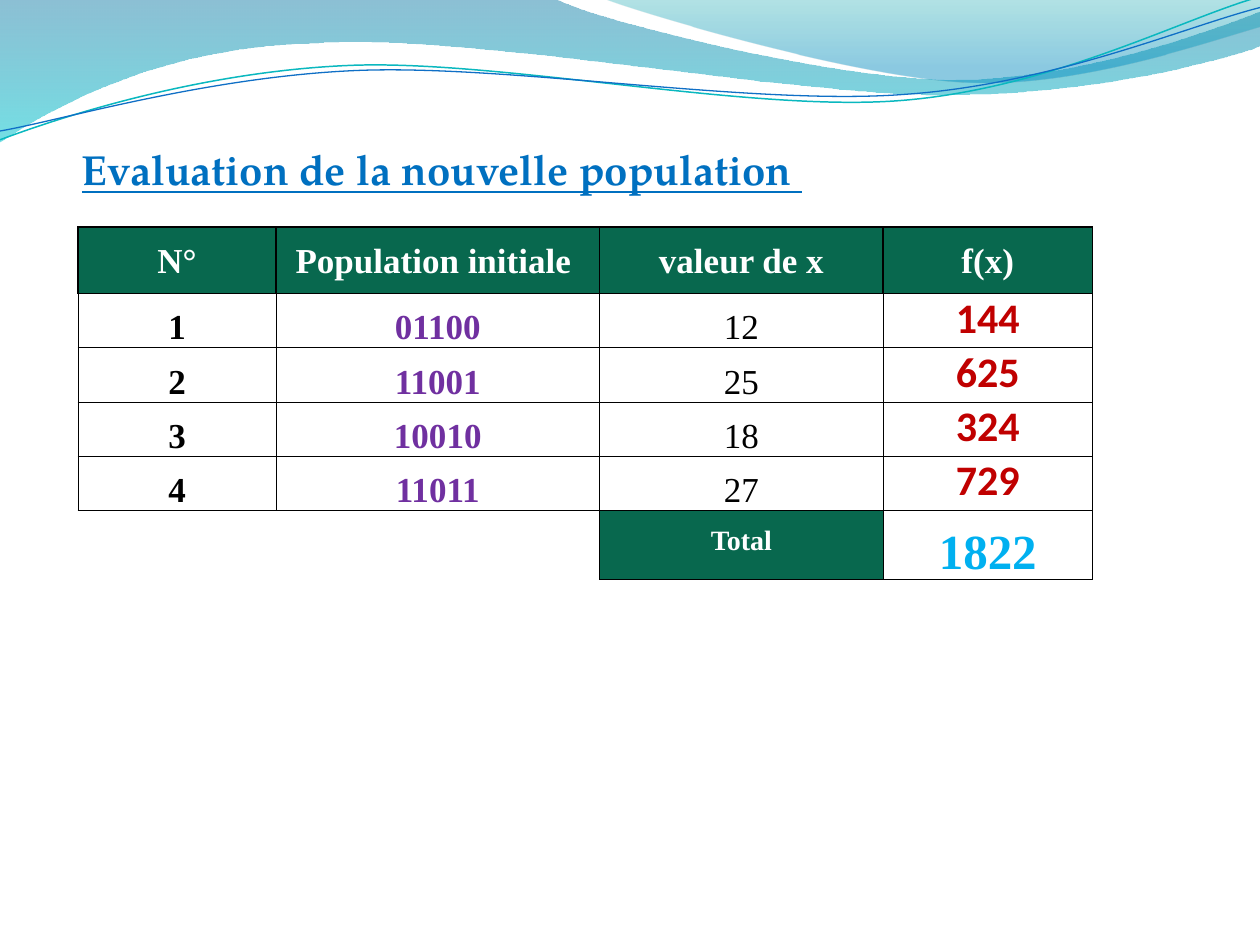
"""Build the slide that evaluates the new population, with its wave header."""
from lxml import etree
from pptx import Presentation
from pptx.dml.color import RGBColor
from pptx.enum.text import MSO_ANCHOR, MSO_AUTO_SIZE, PP_ALIGN
from pptx.oxml.ns import qn
from pptx.util import Inches, Pt

CENTER, JUSTIFY = PP_ALIGN.CENTER, PP_ALIGN.JUSTIFY
TOP, NO_FIT = MSO_ANCHOR.TOP, MSO_AUTO_SIZE.NONE
BLUE = RGBColor(0x00, 0x70, 0xC0)
GREEN = RGBColor(0x08, 0x68, 0x4E)
WHITE = RGBColor(0xFF, 0xFF, 0xFF)
BLACK = RGBColor(0x00, 0x00, 0x00)
PURPLE = RGBColor(0x70, 0x30, 0xA0)
RED = RGBColor(0xC0, 0x00, 0x00)
SKY = RGBColor(0x00, 0xB0, 0xF0)
DEEP_TEAL = RGBColor(0x00, 0x74, 0xA1)
CYAN = RGBColor(0x00, 0xC6, 0xCF)
SEA = RGBColor(0x00, 0xA1, 0xA9)
AZURE = RGBColor(0x00, 0x8B, 0xBF)
TEAL_LINE = RGBColor(0x0A, 0xB8, 0xBF)
BLUE_LINE = RGBColor(0x0F, 0x6F, 0xC6)
SERIF, SANS, TITLE_FONT = "Times New Roman", "Calibri", "TeX Gyre Pagella"
PLAIN_TABLE_STYLE = "{2D5ABB26-0587-4C30-8999-92F81FD0307C}"

TITLE = "Evaluation de la nouvelle population "
HEADERS = ["N°", "Population initiale ", "valeur de x", "f(x)"]
ROWS = [
    ["1", "01100", "12", "144"],
    ["2", "11001", "25", "625"],
    ["3", "10010", "18", "324"],
    ["4", "11011", "27", "729"],
]
TOTAL = ["", "", "Total", "1822"]
COLUMN_WIDTHS = [1.57, 2.57, 2.25, 1.66]
ROW_HEIGHTS = [0.53] + [0.43] * len(ROWS) + [0.49]

HEADER_STYLE = (SERIF, 20, True, WHITE)
COLUMN_STYLES = [
    (SERIF, 20, True, BLACK),
    (SERIF, 20, True, PURPLE),
    (SERIF, 20, False, BLACK),
    (SANS, 24, True, RED),
]
TOTAL_STYLES = [None, None, (SERIF, 16, True, WHITE), (SERIF, 28, True, SKY)]

# Each path is a list of points (two numbers) and Bezier segments (six numbers).
BANDS = [
    ([(0, 0), (4.4, -0.01), (4.76, 0.17, 6.64, 0.63, 7.58, 0.63),
      (8.53, 0.63, 9.58, 0.26, 10, 0.09), (10.01, 0.36),
      (9.83, 0.44, 8.7, 0.76, 7.46, 0.75), (6.22, 0.75, 3.82, 0.28, 2.57, 0.34),
      (1.29, 0.36, 0.46, 0.83, -0.01, 1.13)],
     [(0, DEEP_TEAL, 45), (1, CYAN, 55)]),
    ([(4.79, -0.01), (5.09, 0.11, 6.82, 0.62, 7.69, 0.65),
      (8.56, 0.69, 9.61, 0.32, 10, 0.21), (10, 0)],
     [(0, SEA, 30), (0.8, AZURE, 45)]),
]
WAVES = [
    ([(0, 1.11), (0.48, 0.93, 1.58, 0.57, 2.77, 0.52),
      (3.95, 0.47, 5.93, 0.89, 7.13, 0.8), (8.33, 0.71, 9.38, 0.15, 9.98, -0.02)],
     TEAL_LINE, 0.85),
    ([(0, 1.04), (0.47, 0.96, 1.64, 0.61, 2.83, 0.56),
      (4.03, 0.51, 5.97, 0.84, 7.17, 0.75), (8.36, 0.67, 9.41, 0.21, 10, 0.06)],
     BLUE_LINE, 0.75),
]


def add_path(slide, path, closed):
    segments = [[Inches(value) for value in segment] for segment in path]
    builder = slide.shapes.build_freeform(*segments[0])
    builder.add_line_segments([segment[-2:] for segment in segments[1:]], close=closed)
    shape = builder.convert_to_shape()
    shape.shadow.inherit = False
    lines = list(shape._element.spPr.iter(qn("a:lnTo")))
    for line, segment in zip(lines, segments[1:]):
        if len(segment) == 6:
            curve = etree.Element(qn("a:cubicBezTo"))
            for x, y in zip(segment[::2], segment[1::2]):
                etree.SubElement(curve, qn("a:pt"),
                                 x=str(x - shape.left), y=str(y - shape.top))
            line.getparent().replace(line, curve)
    return shape


def add_band(slide, path, stops):
    shape = add_path(slide, path, True)
    shape.line.fill.background()
    shape.fill.gradient()
    shape.fill.gradient_angle = 270
    for stop, (position, color, _) in zip(shape.fill.gradient_stops, stops):
        stop.position = position
        stop.color.rgb = color
    colors = list(shape._element.spPr.iter(qn("a:srgbClr")))
    for element, (_, _, opacity) in zip(colors, stops):
        etree.SubElement(element, qn("a:alpha"), val=str(opacity * 1000))


def add_wave(slide, path, color, width):
    shape = add_path(slide, path, False)
    shape.fill.background()
    shape.line.color.rgb = color
    shape.line.width = Pt(width)


def style_runs(paragraph, style):
    name, size, bold, color = style
    for run in paragraph.runs:
        run.font.name, run.font.size, run.font.bold = name, Pt(size), bold
        run.font.color.rgb = color


def set_borders(cell, sides, width):
    properties = cell._tc.get_or_add_tcPr()
    for index, side in enumerate(sides):
        line = etree.Element(qn("a:ln" + side), w=str(Pt(width)))
        fill = etree.SubElement(line, qn("a:solidFill"))
        etree.SubElement(fill, qn("a:srgbClr"), val=str(BLACK))
        properties.insert(index, line)


def fill_cell(cell, text, style, top_margin):
    cell.margin_left = cell.margin_right = cell.margin_bottom = 0
    cell.margin_top = Inches(top_margin)
    cell.text_frame.text = text
    paragraph = cell.text_frame.paragraphs[0]
    paragraph.alignment = CENTER
    style_runs(paragraph, style)
    if style[3] == WHITE:
        cell.fill.solid()
        cell.fill.fore_color.rgb = GREEN


def add_population_table(slide):
    contents = [HEADERS, *ROWS, TOTAL]
    styles = [[HEADER_STYLE] * len(HEADERS), *[COLUMN_STYLES] * len(ROWS), TOTAL_STYLES]
    frame = slide.shapes.add_table(
        len(contents), len(HEADERS), Inches(0.62), Inches(1.8),
        Inches(sum(COLUMN_WIDTHS)), Inches(sum(ROW_HEIGHTS)))
    table = frame.table
    table.first_row = table.horz_banding = False
    table._tbl.tblPr.find(qn("a:tableStyleId")).text = PLAIN_TABLE_STYLE
    for column, width in zip(table.columns, COLUMN_WIDTHS):
        column.width = Inches(width)
    for row, height in zip(table.rows, ROW_HEIGHTS):
        row.height = Inches(height)
    for i, texts in enumerate(contents):
        for j, text in enumerate(texts):
            cell, style = table.cell(i, j), styles[i][j]
            if style is None:
                set_borders(cell, "RT" if styles[i][j + 1] else "T", 0.5)
                continue
            fill_cell(cell, text, style, 0 if style[0] == SANS else 0.12)
            set_borders(cell, "LRTB", 1 if i == 0 else 0.5)


def set_title(slide):
    title = slide.shapes.title
    title.left, title.top = Inches(0.55), Inches(1.09)
    title.width, title.height = Inches(9), Inches(6.09)
    title.text_frame.text = TITLE
    title.text_frame.vertical_anchor = TOP
    title.text_frame.auto_size = NO_FIT
    paragraph = title.text_frame.paragraphs[0]
    paragraph.alignment = JUSTIFY
    style_runs(paragraph, (TITLE_FONT, 24, True, BLUE))
    paragraph.runs[0].font.underline = True


def main():
    presentation = Presentation()
    presentation.slide_width, presentation.slide_height = Inches(10), Inches(7.5)
    slide = presentation.slides.add_slide(presentation.slide_layouts[5])
    for band in BANDS:
        add_band(slide, *band)
    for wave in WAVES:
        add_wave(slide, *wave)
    set_title(slide)
    add_population_table(slide)
    presentation.save("out.pptx")


if __name__ == "__main__":
    main()
